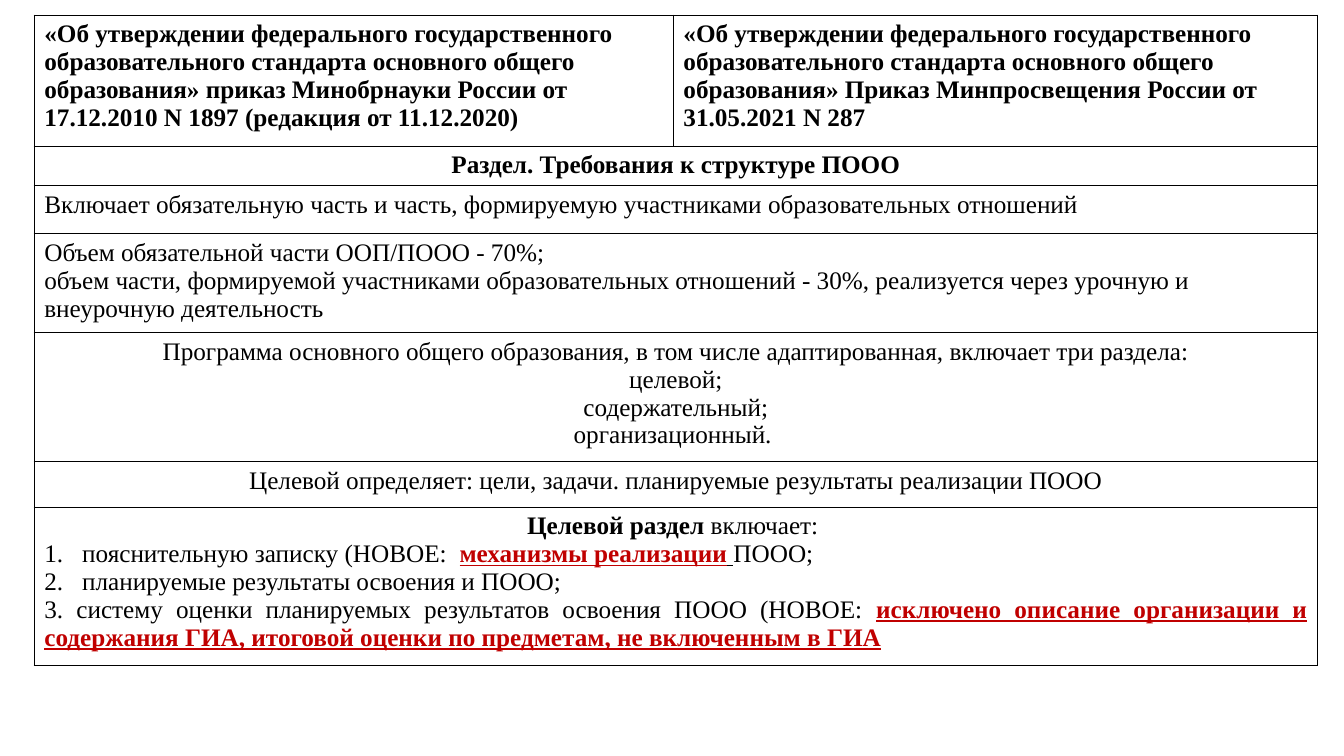
import pptx
import pptx.dml.color
import pptx.enum.text
import pptx.oxml
import pptx.oxml.ns
import pptx.util
from pptx.util import Pt

BLACK = pptx.dml.color.RGBColor(0x00, 0x00, 0x00)
WHITE = pptx.dml.color.RGBColor(0xFF, 0xFF, 0xFF)
RED = pptx.dml.color.RGBColor(0xC0, 0x00, 0x00)

FONT_NAME = "Times New Roman"
FONT_SIZE = 18
NUMBER_INDENT = 27

LEFT = pptx.enum.text.PP_ALIGN.LEFT
CENTER = pptx.enum.text.PP_ALIGN.CENTER
JUSTIFY = pptx.enum.text.PP_ALIGN.JUSTIFY

TABLE_LEFT, TABLE_TOP = 24.5, 10.8
COLUMN_WIDTHS = [456.5, 460]
ROW_HEIGHTS = [93.6, 28.1, 34.6, 70.6, 92.2, 32.4, 113]

# Run styles: bold, underline, colour
PLAIN = (False, False, BLACK)
BOLD = (True, False, BLACK)
UNDERLINED = (False, True, BLACK)
NEW = (True, True, RED)

# Each cell is a list of paragraphs: (alignment, numbered, runs)
ORDERS = [
    "«Об утверждении федерального государственного образовательного стандарта "
    "основного общего образования» приказ Минобрнауки России от 17.12.2010 N 1897 "
    "(редакция от 11.12.2020)",
    "«Об утверждении федерального государственного образовательного стандарта "
    "основного общего образования» Приказ Минпросвещения России от 31.05.2021 N 287",
]
SECTIONS = [
    [(CENTER, False, [("Раздел. Требования к структуре ПООО", BOLD)])],
    [(LEFT, False, [("Включает обязательную часть и часть, формируемую участниками "
                     "образовательных отношений", PLAIN)])],
    [(LEFT, False, [("Объем обязательной части ООП/ПООО - 70%;", PLAIN)]),
     (LEFT, False, [("объем части, формируемой участниками образовательных отношений - 30%, "
                     "реализуется через урочную и внеурочную деятельность", PLAIN)])],
    [(CENTER, False, [(line, PLAIN)]) for line in (
        "Программа основного общего образования, в том числе адаптированная, "
        "включает три раздела:",
        "целевой;", "содержательный;", "организационный. ")],
    [(CENTER, False, [("Целевой определяет: цели, задачи. планируемые результаты "
                       "реализации ПООО", PLAIN)])],
    [(CENTER, False, [("Целевой раздел ", BOLD), ("включает: ", PLAIN)]),
     (JUSTIFY, True, [("пояснительную записку (НОВОЕ:  ", PLAIN),
                      ("механизмы реализации", NEW), (" ", UNDERLINED), ("ПООО;", PLAIN)]),
     (JUSTIFY, True, [("планируемые результаты освоения и ПООО;", PLAIN)]),
     (JUSTIFY, False, [("3. систему оценки планируемых результатов освоения ПООО (НОВОЕ: ", PLAIN),
                       ("исключено описание организации и содержания ГИА, итоговой оценки "
                        "по предметам, не включенным в ГИА", NEW)])],
]


def number_paragraph(paragraph):
    """Give the paragraph an automatic number with a hanging indent."""
    properties = paragraph._p.get_or_add_pPr()
    properties.set("marL", str(Pt(NUMBER_INDENT)))
    properties.set("indent", str(-Pt(NUMBER_INDENT)))
    numbering = pptx.oxml.parse_xml(
        f'<a:buAutoNum {pptx.oxml.ns.nsdecls("a")} type="arabicPeriod"/>')
    properties.append(numbering)


def write_paragraph(paragraph, alignment, numbered, runs):
    paragraph.alignment = alignment
    if numbered:
        number_paragraph(paragraph)
    paragraph.font.name = FONT_NAME
    paragraph.font.size = Pt(FONT_SIZE)
    for text, (bold, underline, color) in runs:
        run = paragraph.add_run()
        run.text = text
        run.font.name = FONT_NAME
        run.font.size = Pt(FONT_SIZE)
        run.font.bold = bold
        run.font.underline = underline
        run.font.color.rgb = color


def write_cell(cell, paragraphs):
    frame = cell.text_frame
    for index, content in enumerate(paragraphs):
        paragraph = frame.add_paragraph() if index else frame.paragraphs[0]
        write_paragraph(paragraph, *content)


def style_cell(cell):
    """Black lines on all four sides and a white fill."""
    properties = cell._tc.get_or_add_tcPr()
    for side in ("lnL", "lnR", "lnT", "lnB"):
        properties.append(pptx.oxml.parse_xml(
            f'<a:{side} {pptx.oxml.ns.nsdecls("a")} w="{Pt(1)}">'
            f'<a:solidFill><a:srgbClr val="{BLACK}"/></a:solidFill></a:{side}>'))
    cell.fill.solid()
    cell.fill.fore_color.rgb = WHITE


def add_comparison_table(slide):
    table = slide.shapes.add_table(
        len(ROW_HEIGHTS), len(COLUMN_WIDTHS), Pt(TABLE_LEFT), Pt(TABLE_TOP),
        Pt(sum(COLUMN_WIDTHS)), Pt(sum(ROW_HEIGHTS))).table
    table.first_row = False
    table.horz_banding = False
    for column, width in zip(table.columns, COLUMN_WIDTHS):
        column.width = Pt(width)
    for row, height in zip(table.rows, ROW_HEIGHTS):
        row.height = Pt(height)
    for cell in table.iter_cells():
        style_cell(cell)
    return table


def main():
    presentation = pptx.Presentation()
    presentation.slide_width = Pt(960)
    presentation.slide_height = Pt(540)
    slide = presentation.slides.add_slide(presentation.slide_layouts[6])

    table = add_comparison_table(slide)

    # Header row: the two orders side by side
    for column, order in enumerate(ORDERS):
        write_cell(table.cell(0, column), [(LEFT, False, [(order, BOLD)])])

    # Sections across both columns
    for row, paragraphs in enumerate(SECTIONS, start=1):
        section = table.cell(row, 0)
        section.merge(table.cell(row, 1))
        write_cell(section, paragraphs)

    presentation.save("out.pptx")


if __name__ == "__main__":
    main()
